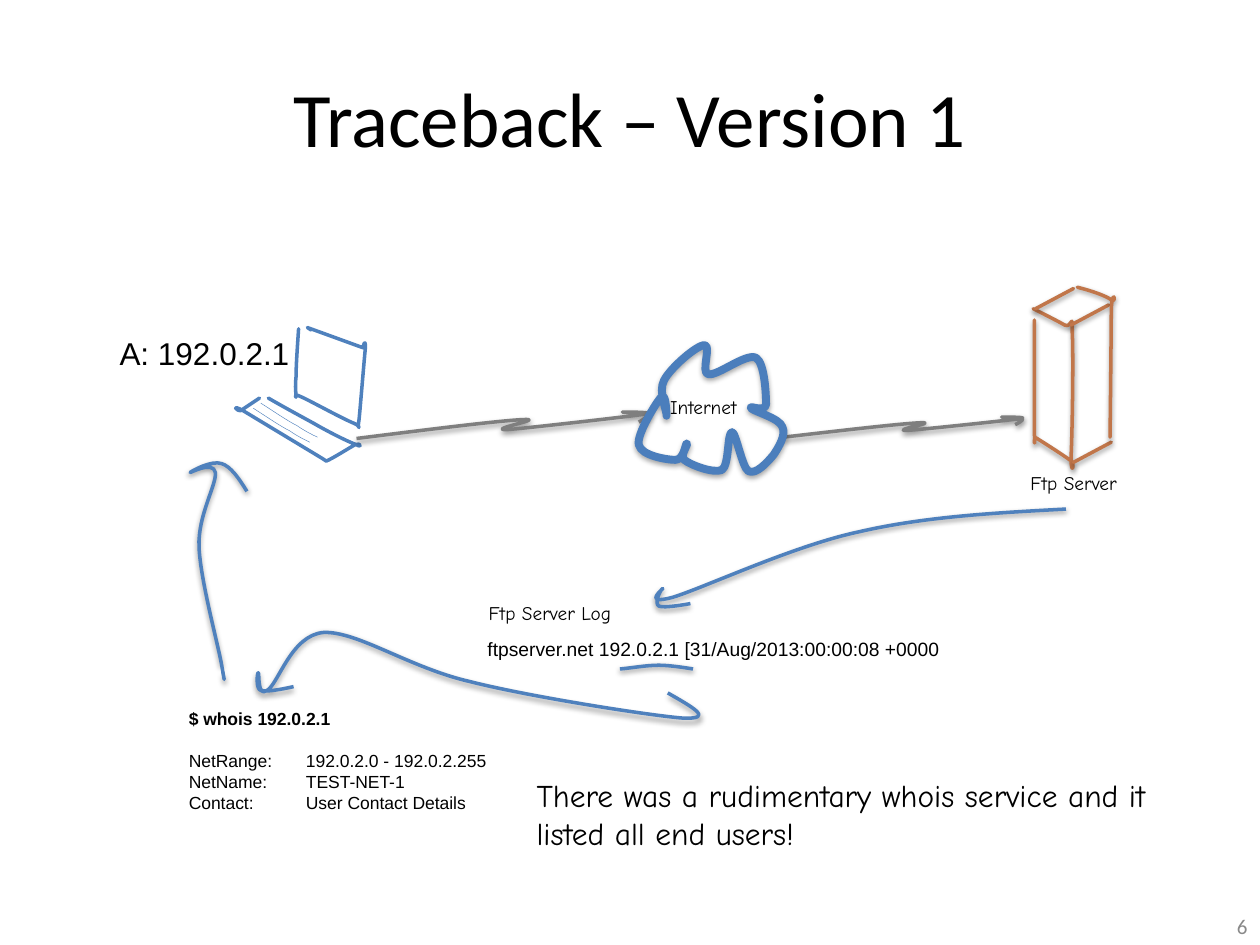
from lxml import etree
from pptx import Presentation
from pptx import util as u
from pptx.dml.color import RGBColor
from pptx.enum import text
from pptx.oxml import ns

COLORS = {
    "ink": "000000",
    "number": "898989",
    "laptop": "4F81BD",
    "link": "7F7F7F",
    "cloud": "4B7EBC",
    "server": "C1764A",
}

LAPTOP_SCREEN = [
    (2.37, 2.61), (2.36, 2.76, 2.35, 2.9, 2.35, 2.99),
    (2.34, 3.08, 2.35, 3.12, 2.35, 3.15), (2.36, 3.17, 2.31, 3.11, 2.39, 3.15),
    (2.46, 3.18, 2.73, 3.33, 2.81, 3.36), (2.88, 3.39, 2.83, 3.43, 2.85, 3.33),
    (2.86, 3.23, 2.89, 2.86, 2.9, 2.76), (2.9, 2.67, 2.88, 2.76, 2.88, 2.76),
    (2.44, 2.6), (2.47, 2.62),
]
LAPTOP_BASE = [
    (2.13, 3.16), (2.25, 3.23, 2.38, 3.3, 2.49, 3.36),
    (2.61, 3.43, 2.77, 3.51, 2.83, 3.53), (2.88, 3.56, 2.86, 3.51, 2.82, 3.53),
    (2.78, 3.55, 2.64, 3.64, 2.59, 3.66), (2.56, 3.64), (1.93, 3.26),
    (1.82, 3.2, 1.89, 3.27, 1.91, 3.26), (1.94, 3.24, 2.06, 3.16, 2.06, 3.16),
]
KEY_ROW = [
    (0, 0), (0.11, 0.07, 0.21, 0.14, 0.29, 0.18),
    (0.36, 0.23, 0.45, 0.27, 0.45, 0.27),
]
LINK = [
    (0, 0.21), (0.56, 0.14, 1.12, 0.07, 1.32, 0.06),
    (1.52, 0.05, 1.03, 0.14, 1.19, 0.14), (1.34, 0.13, 2.12, 0.04, 2.27, 0.02),
    (2.43, 0, 2.11, 0, 2.11, 0), (2.12, 0, 2.29, 0.01, 2.31, 0.02),
    (2.33, 0.03, 2.24, 0.08, 2.24, 0.08),
]
CLOUD = [
    (6.08, 3.21), (6.08, 3.14, 6.07, 2.88, 6, 2.84),
    (5.92, 2.8, 5.69, 2.99, 5.62, 2.97), (5.56, 2.96, 5.65, 2.73, 5.59, 2.74),
    (5.53, 2.74, 5.32, 2.92, 5.27, 3.02), (5.22, 3.11, 5.3, 3.28, 5.29, 3.3),
    (5.29, 3.32, 5.29, 3.11, 5.25, 3.15), (5.21, 3.19, 5.05, 3.45, 5.07, 3.53),
    (5.09, 3.62, 5.3, 3.65, 5.36, 3.65), (5.43, 3.65, 5.44, 3.52, 5.45, 3.52),
    (5.47, 3.52, 5.39, 3.62, 5.43, 3.65), (5.48, 3.69, 5.66, 3.76, 5.73, 3.73),
    (5.79, 3.69, 5.77, 3.43, 5.81, 3.43), (5.84, 3.43, 5.89, 3.71, 5.94, 3.74),
    (6, 3.77, 6.09, 3.67, 6.14, 3.61), (6.18, 3.55, 6.24, 3.45, 6.21, 3.39),
    (6.19, 3.32, 5.99, 3.27, 5.96, 3.24), (5.94, 3.21, 6.07, 3.28, 6.08, 3.21),
]
SERVER_FRONT = [
    (8.21, 2.54), (8.21, 2.91, 8.21, 3.29, 8.21, 3.45),
    (8.22, 3.6, 8.19, 3.44, 8.23, 3.48), (8.28, 3.51, 8.45, 3.62, 8.49, 3.65),
    (8.54, 3.67, 8.5, 3.8, 8.5, 3.63), (8.51, 3.46, 8.52, 2.81, 8.51, 2.64),
    (8.51, 2.46, 8.51, 2.61, 8.45, 2.58), (8.4, 2.55, 8.2, 2.45, 8.2, 2.45),
]
SERVER_BACK = [
    (8.55, 2.28), (8.67, 2.31, 8.78, 2.35, 8.82, 2.38),
    (8.87, 2.41, 8.83, 2.27, 8.82, 2.45), (8.82, 2.63, 8.81, 3.47, 8.81, 3.47),
]
SERVER_TO_LOG = [
    (8.46, 4.04), (7.9, 4.07, 7.34, 4.1, 6.82, 4.22),
    (6.3, 4.33, 5.6, 4.66, 5.34, 4.74), (5.08, 4.81, 5.28, 4.66, 5.26, 4.67),
    (5.24, 4.68, 5.19, 4.79, 5.23, 4.81), (5.27, 4.83, 5.48, 4.79, 5.48, 4.79),
]
UNDERLINE = [
    (4.92, 5.31), (5.03, 5.3, 5.13, 5.28, 5.23, 5.28),
    (5.33, 5.28, 5.5, 5.31, 5.5, 5.31),
]
LOG_TO_WHOIS = [
    (5.3, 5.5), (5.49, 5.61, 5.68, 5.71, 5.42, 5.7),
    (5.16, 5.68, 4.2, 5.53, 3.73, 5.41), (3.25, 5.3, 2.84, 5.01, 2.57, 5.02),
    (2.31, 5.04, 2.21, 5.43, 2.12, 5.48), (2.04, 5.54, 2.06, 5.34, 2.05, 5.34),
    (2.04, 5.34, 2.03, 5.47, 2.07, 5.48), (2.12, 5.5, 2.33, 5.45, 2.33, 5.45),
]
WHOIS_TO_LAPTOP = [
    (1.77, 5.34), (1.78, 5.39, 1.79, 5.45, 1.76, 5.28),
    (1.73, 5.11, 1.59, 4.6, 1.58, 4.34), (1.57, 4.09, 1.72, 3.85, 1.71, 3.75),
    (1.69, 3.65, 1.5, 3.76, 1.51, 3.75), (1.52, 3.74, 1.68, 3.65, 1.76, 3.68),
    (1.83, 3.7, 1.9, 3.8, 1.96, 3.9),
]


def add_xml(parent, tag, **attributes):
    child = etree.SubElement(parent, ns.qn(tag))
    for name, value in attributes.items():
        child.set(name, str(value))
    return child


def place(stroke, left, top, across=1, down=1):
    return [tuple(value * (down if i % 2 else across) + (top if i % 2 else left)
                  for i, value in enumerate(step)) for step in stroke]


def add_shadow(shape, alpha):
    effects = shape._element.spPr.find(ns.qn("a:effectLst"))
    shadow = add_xml(effects, "a:outerShdw", blurRad=u.Pt(3.1), dist=u.Pt(1.6),
                     dir=5400000, rotWithShape=0)
    add_xml(add_xml(shadow, "a:srgbClr", val=COLORS["ink"]), "a:alpha", val=alpha * 1000)


def add_stroke(parent, stroke, color, width=2, shadow=38, closed=False, cap="flat"):
    start, *steps = stroke
    points = [(u.Inches(x), u.Inches(y))
              for step in steps for x, y in zip(step[::2], step[1::2])]
    builder = parent.shapes.build_freeform(u.Inches(start[0]), u.Inches(start[1]))
    builder.add_line_segments(points, close=closed)
    shape = builder.convert_to_shape()
    segments = iter(shape._element.xpath(".//a:lnTo"))
    for step in steps:
        first = next(segments)
        if len(step) == 6:
            first.tag = ns.qn("a:cubicBezTo")
            for _ in range(2):
                extra = next(segments)
                first.append(extra[0])
                extra.getparent().remove(extra)
    shape.fill.background()
    shape.line.color.rgb = RGBColor.from_string(COLORS[color])
    shape.line.width = u.Pt(width)
    outline = shape._element.spPr.find(ns.qn("a:ln"))
    outline.set("cap", cap)
    add_xml(outline, "a:round")
    shape.shadow.inherit = False
    if shadow:
        add_shadow(shape, shadow)


def add_span(para, words, size, font, color="ink", bold=False):
    span = para.add_run()
    span.text = words
    span.font.size = u.Pt(size)
    span.font.name = font
    span.font.bold = bold
    span.font.color.rgb = RGBColor.from_string(COLORS[color])


def add_box(page, left, top, width, height, wrap=False, middle=False):
    box = page.shapes.add_textbox(*(u.Inches(v) for v in (left, top, width, height)))
    frame = box.text_frame
    frame.word_wrap = wrap
    if middle:
        frame.vertical_anchor = text.MSO_ANCHOR.MIDDLE
    else:
        frame.auto_size = text.MSO_AUTO_SIZE.SHAPE_TO_FIT_TEXT
    return frame


def add_label(page, place_at, words, size, font, color="ink", align=None, **layout):
    para = add_box(page, *place_at, **layout).paragraphs[0]
    para.alignment = align
    add_span(para, words, size, font, color)


def add_whois(page):
    frame = add_box(page, 1.4, 5.57, 2.6, 1.11)
    add_span(frame.paragraphs[0], "$ whois 192.0.2.1", 10, "Arial", bold=True)
    records = [("NetRange:", "192.0.2.0 - 192.0.2.255"), ("NetName:", "TEST-NET-1"),
               ("Contact:", "User Contact Details")]
    for i, record in enumerate(records):
        para = frame.add_paragraph()
        para.space_before = u.Pt(0 if i else 12)
        tabs = add_xml(para._p.get_or_add_pPr(), "a:tabLst")
        add_xml(tabs, "a:tab", pos=u.Inches(0.93), algn="l")
        add_span(para, "\t".join(record), 10, "Arial")


def add_laptop(page):
    laptop = page.shapes.add_group_shape()
    for stroke in (LAPTOP_SCREEN, LAPTOP_BASE):
        add_stroke(laptop, stroke, "laptop", shadow=0, cap="rnd")
    for left, top in ((2.01, 3.24), (2.07, 3.2)):
        add_stroke(laptop, place(KEY_ROW, left, top), "laptop", 0.25, shadow=0)


def add_server(page):
    server = page.shapes.add_group_shape()
    edges = [[(x, y), (x + 0.3, y - 0.16)]
             for x, y in ((8.5, 2.58), (8.52, 3.67), (8.22, 2.45))]
    for stroke in (SERVER_FRONT, *edges, SERVER_BACK):
        add_stroke(server, stroke, "server", cap="rnd")


def main():
    deck = Presentation()
    deck.slide_width, deck.slide_height = u.Inches(10), u.Inches(7.5)
    page = deck.slides.add_slide(deck.slide_layouts[6])
    add_label(page, (0.29, 0.3, 9.42, 1.25), "Traceback – Version 1", 44, "Calibri",
              align=text.PP_ALIGN.CENTER, wrap=True, middle=True)
    add_label(page, (7.67, 7.15, 2.33, 0.4), "6", 12, "Calibri", "number",
              text.PP_ALIGN.RIGHT, wrap=True, middle=True)
    add_laptop(page)
    add_label(page, (0.85, 2.6, 1.58, 0.4), "A: 192.0.2.1", 18, "Arial")
    add_stroke(page, place(LINK, 2.83, 3.27), "link")
    add_stroke(page, place(LINK, 6.22, 3.31, 0.82, 0.76), "link")
    add_stroke(page, CLOUD, "cloud", 4.5, shadow=35, closed=True)
    add_server(page)
    add_label(page, (8.08, 3.69, 1.09, 0.29), "Ftp Server", 11, "Comic Neue")
    add_label(page, (5.22, 3.09, 0.85, 0.29), "Internet", 11, "Comic Neue")
    add_label(page, (3.77, 5.01, 3.82, 0.29),
              "ftpserver.net 192.0.2.1 [31/Aug/2013:00:00:08 +0000", 11, "Arial")
    add_label(page, (3.78, 4.72, 1.46, 0.29), "Ftp Server Log", 11, "Comic Neue")
    add_whois(page)
    for stroke in (SERVER_TO_LOG, UNDERLINE, LOG_TO_WHOIS, WHOIS_TO_LAPTOP):
        add_stroke(page, stroke, "laptop")
    add_label(page, (4.16, 6.11, 5.48, 0.71),
              "There was a rudimentary whois service and it listed all end users!",
              18, "Comic Neue", wrap=True)
    deck.save("out.pptx")


if __name__ == "__main__":
    main()
